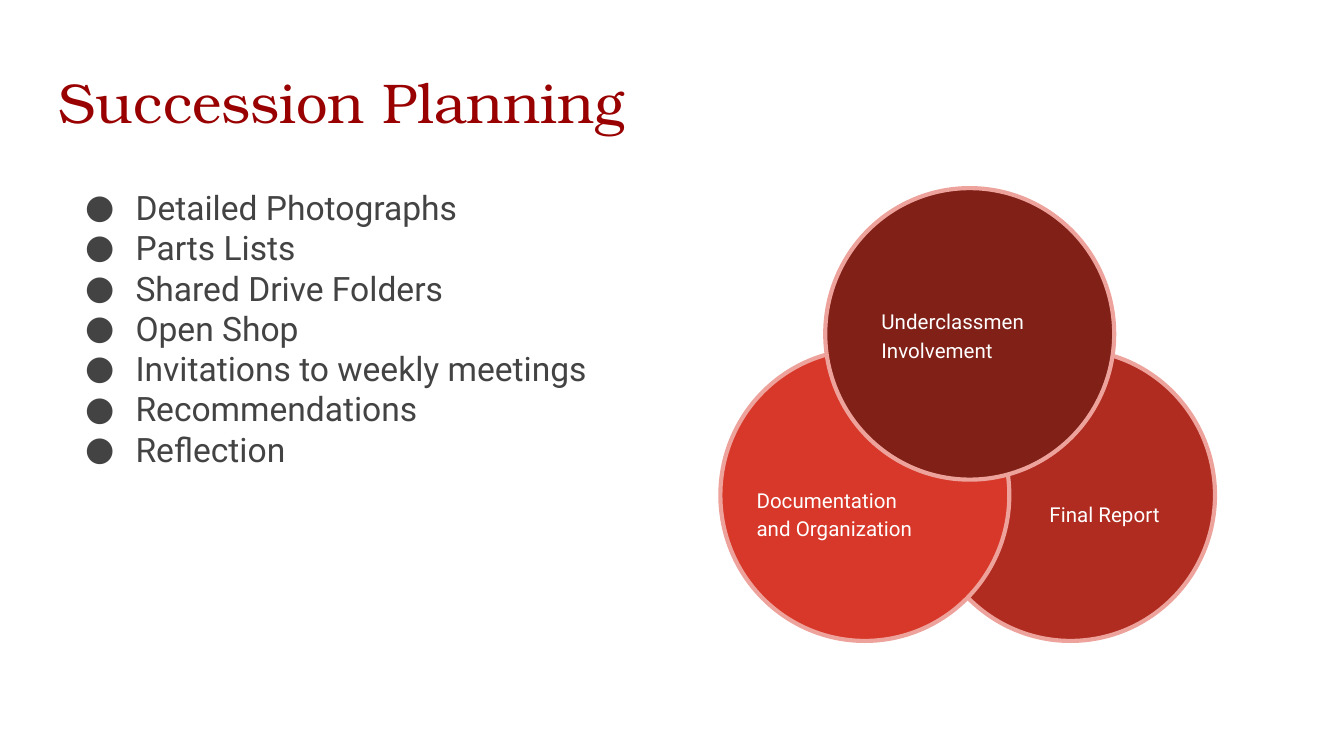
from dataclasses import dataclass
from typing import Any

from lxml.etree import SubElement
from pptx import Presentation
from pptx.dml.color import RGBColor
from pptx.enum.shapes import MSO_SHAPE
from pptx.enum.text import MSO_ANCHOR
from pptx.oxml.ns import qn
from pptx.util import Pt

COLOURS = {
    "title": "990000",
    "body": "434343",
    "label": "FFFFFF",
    "outline": "EDA29B",
    "report": "B02C20",
    "documentation": "D83829",
    "involvement": "802017",
}


@dataclass
class SlideBuilder:
    """Hold the style and the current slide, and add elements measured in points."""

    page: Any
    title_font: str = "TeX Gyre Bonum"
    body_font: str = "Roboto"
    inset: float = 7.2
    diameter: tuple = (154.8, 156.2)

    def colour(self, name):
        return RGBColor.from_string(COLOURS[name])

    def text(self, area, lines, font, size, colour, anchor=MSO_ANCHOR.TOP, spacing=None):
        frame = self.page.shapes.add_textbox(*map(Pt, area)).text_frame
        frame.word_wrap = True
        frame.vertical_anchor = anchor
        frame.margin_left = frame.margin_right = Pt(self.inset)
        frame.margin_top = frame.margin_bottom = Pt(self.inset)
        frame.text = "\n".join(lines)
        for paragraph in frame.paragraphs:
            paragraph.font.name = font
            paragraph.font.size = Pt(size)
            paragraph.font.color.rgb = self.colour(colour)
            if spacing:
                paragraph.line_spacing = spacing
        return frame

    def title(self, area, wording):
        self.text(area, [wording], self.title_font, 30, "title")

    def bullets(self, area, lines):
        frame = self.text(area, lines, self.body_font, 18, "body")
        for paragraph in frame.paragraphs:
            properties = paragraph._p.get_or_add_pPr()
            properties.set("marL", str(Pt(36)))
            properties.set("indent", str(Pt(-27)))
            bullet_colour = SubElement(properties, qn("a:buClr"))
            SubElement(bullet_colour, qn("a:srgbClr"), val=COLOURS["body"])
            SubElement(properties, qn("a:buFont"), typeface=self.body_font)
            SubElement(properties, qn("a:buChar"), char="●")

    def circle(self, left, top, fill, label_area, lines):
        shape = self.page.shapes.add_shape(
            MSO_SHAPE.OVAL, Pt(left), Pt(top), *map(Pt, self.diameter)
        )
        shape.shadow.inherit = False
        shape.fill.solid()
        shape.fill.fore_color.rgb = self.colour(fill)
        shape.line.color.rgb = self.colour("outline")
        shape.line.width = Pt(2.25)
        self.text(label_area, lines, self.body_font, 11, "label", MSO_ANCHOR.MIDDLE, 1.15)


def main():
    deck = Presentation()
    deck.slide_width, deck.slide_height = Pt(720), Pt(405)
    slide = SlideBuilder(deck.slides.add_slide(deck.slide_layouts[6]))

    slide.title((24.5, 28.8, 671, 45.4), "Succession Planning")
    slide.bullets(
        (29.5, 92.9, 334.8, 293),
        [
            "Detailed Photographs",
            "Parts Lists",
            "Shared Drive Folders",
            "Open Shop",
            "Invitations to weekly meetings",
            "Recommendations",
            "Reflection",
        ],
    )

    lower_top, upper_top = 187.2, 100.8
    label_drop, label_height = 65.5, 43.9
    circles = [
        (496.1, lower_top, "report", 555.1, 90, ["Final Report"]),
        (385.9, lower_top, "documentation", 398.2, 104.4, ["Documentation and Organization"]),
        (442.1, upper_top, "involvement", 465.1, 107.3, ["Underclassmen", "Involvement"]),
    ]
    for left, top, fill, label_left, label_width, lines in circles:
        drop = label_drop if top == lower_top else 56.2
        label_area = (label_left, top + drop, label_width, label_height)
        slide.circle(left, top, fill, label_area, lines)

    deck.save("out.pptx")


if __name__ == "__main__":
    main()
